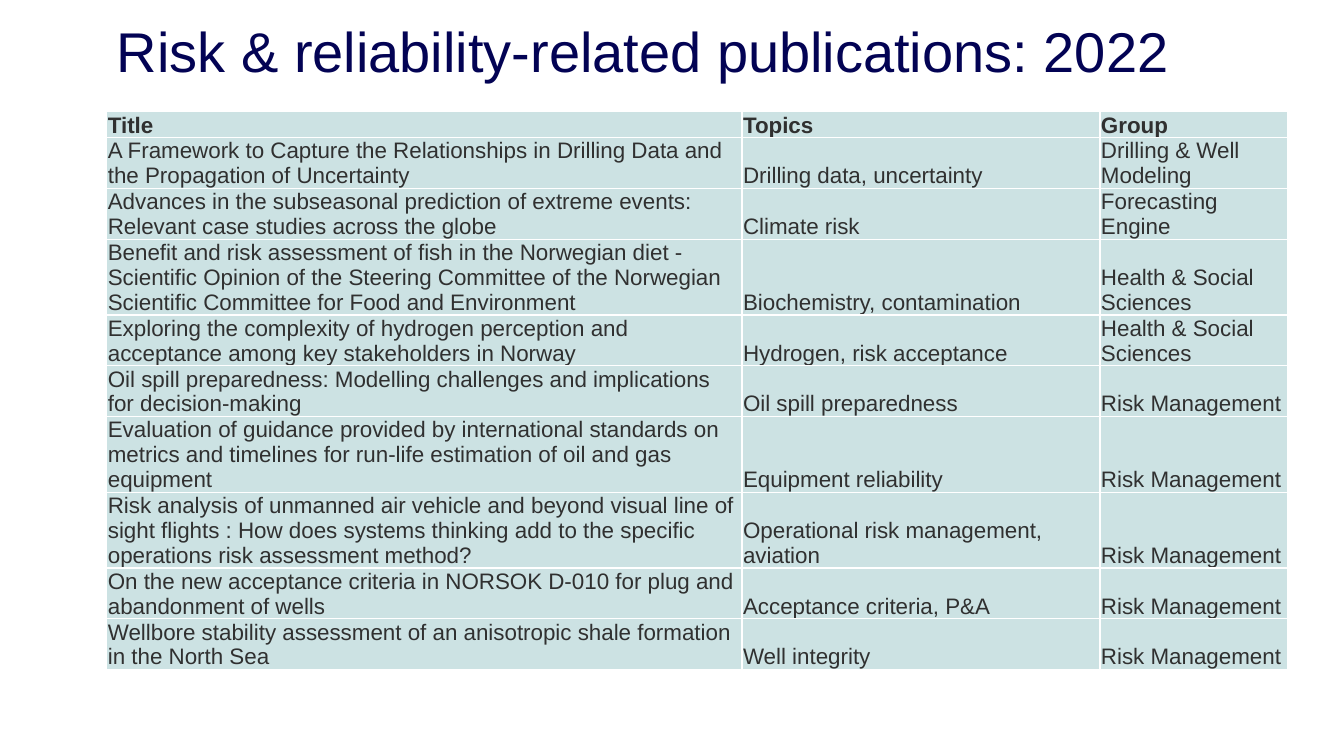
from pptx import Presentation
from pptx.dml.color import RGBColor
from pptx.enum.text import MSO_ANCHOR, PP_ALIGN
from pptx.util import Inches, Pt

NAVY = RGBColor(0x03, 0x03, 0x54)
DARK_GREY = RGBColor(0x30, 0x30, 0x30)
PALE_TEAL = RGBColor(0xCC, 0xE2, 0xE3)
FONT = "Arial"
LINE_HEIGHT = 0.25
COLUMN_WIDTHS = [6.3, 3.55, 1.86]

# Lines of text in the row, then title, topics and group
PUBLICATIONS = [
    (1, "Title", "Topics", "Group"),
    (2, "A Framework to Capture the Relationships in Drilling Data and the Propagation of Uncertainty",
     "Drilling data, uncertainty", "Drilling & Well Modeling"),
    (2, "Advances in the subseasonal prediction of extreme events: Relevant case studies across the globe",
     "Climate risk", "Forecasting Engine"),
    (3, "Benefit and risk assessment of fish in the Norwegian diet - Scientific Opinion of the Steering "
     "Committee of the Norwegian Scientific Committee for Food and Environment",
     "Biochemistry, contamination", "Health & Social Sciences"),
    (2, "Exploring the complexity of hydrogen perception and acceptance among key stakeholders in Norway",
     "Hydrogen, risk acceptance", "Health & Social Sciences"),
    (2, "Oil spill preparedness: Modelling challenges and implications for decision-making",
     "Oil spill preparedness", "Risk Management"),
    (3, "Evaluation of guidance provided by international standards on metrics and timelines for "
     "run-life estimation of oil and gas equipment",
     "Equipment reliability", "Risk Management"),
    (3, "Risk analysis of unmanned air vehicle and beyond visual line of sight flights : How does "
     "systems thinking add to the specific operations risk assessment method?",
     "Operational risk management, aviation", "Risk Management"),
    (2, "On the new acceptance criteria in NORSOK D-010 for plug and abandonment of wells",
     "Acceptance criteria, P&A", "Risk Management"),
    (2, "Wellbore stability assessment of an anisotropic shale formation in the North Sea",
     "Well integrity", "Risk Management"),
]

prs = Presentation()
prs.slide_width = Inches(13.33)
prs.slide_height = Inches(7.5)
slide = prs.slides.add_slide(prs.slide_layouts[5])

title = slide.shapes.title
title.left, title.top = Inches(1.06), Inches(0.19)
title.width, title.height = Inches(11.05), Inches(1.33)
tf = title.text_frame
tf.text = "Risk & reliability-related publications: 2022"
tf.vertical_anchor = MSO_ANCHOR.TOP
p = tf.paragraphs[0]
p.alignment = PP_ALIGN.LEFT
p.line_spacing = 0.9
r = p.runs[0]
r.font.name = FONT
r.font.size = Pt(40)
r.font.color.rgb = NAVY

table_height = LINE_HEIGHT * sum(row[0] for row in PUBLICATIONS)
table = slide.shapes.add_table(
    len(PUBLICATIONS), len(COLUMN_WIDTHS), Inches(1.06), Inches(1.11),
    Inches(sum(COLUMN_WIDTHS)), Inches(table_height)).table
table.first_row = False
table.horz_banding = False
for column, width in zip(table.columns, COLUMN_WIDTHS):
    column.width = Inches(width)

for i, (lines, *texts) in enumerate(PUBLICATIONS):
    table.rows[i].height = Inches(lines * LINE_HEIGHT)
    for cell, text in zip(table.rows[i].cells, texts):
        cell.fill.solid()
        cell.fill.fore_color.rgb = PALE_TEAL
        cell.vertical_anchor = MSO_ANCHOR.BOTTOM
        cell.margin_left = cell.margin_right = cell.margin_top = Inches(0.01)
        cell.margin_bottom = 0
        cell.text_frame.text = text
        r = cell.text_frame.paragraphs[0].runs[0]
        r.font.name = FONT
        r.font.size = Pt(16)
        r.font.bold = i == 0
        r.font.color.rgb = DARK_GREY

prs.save("out.pptx")
